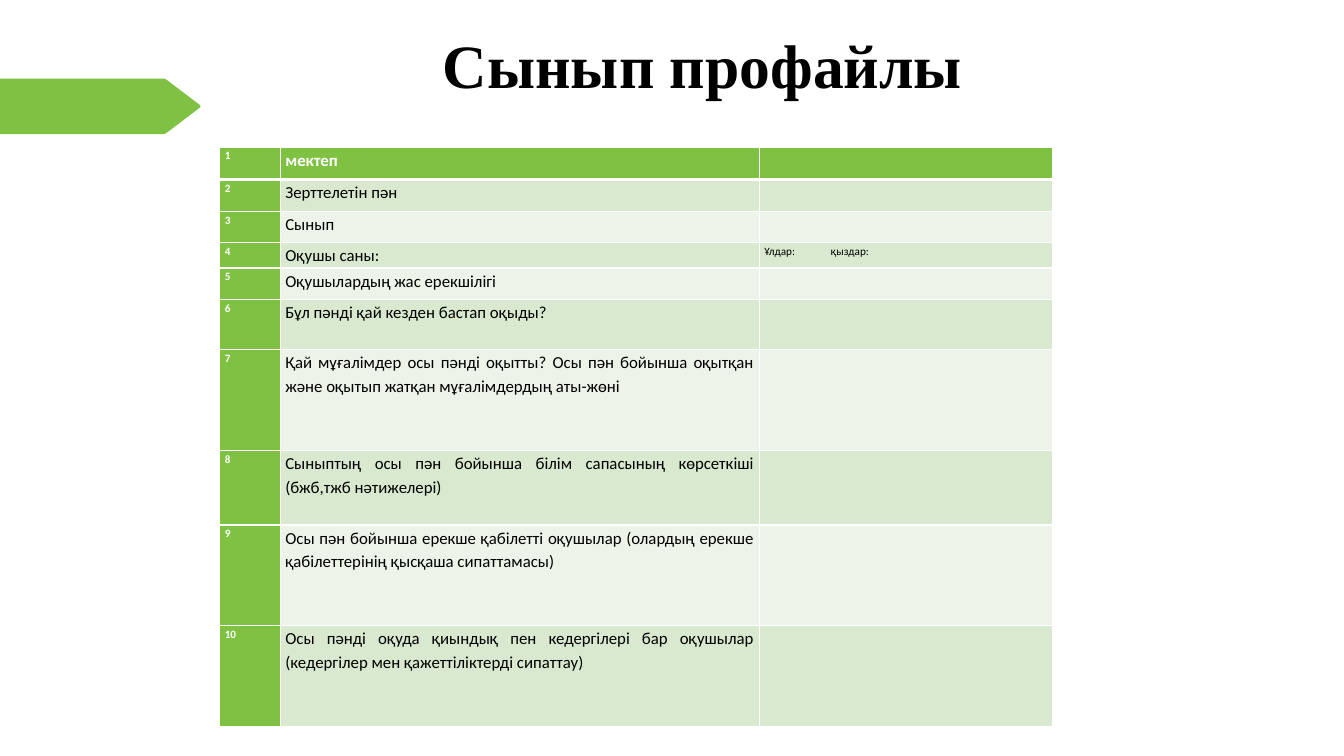
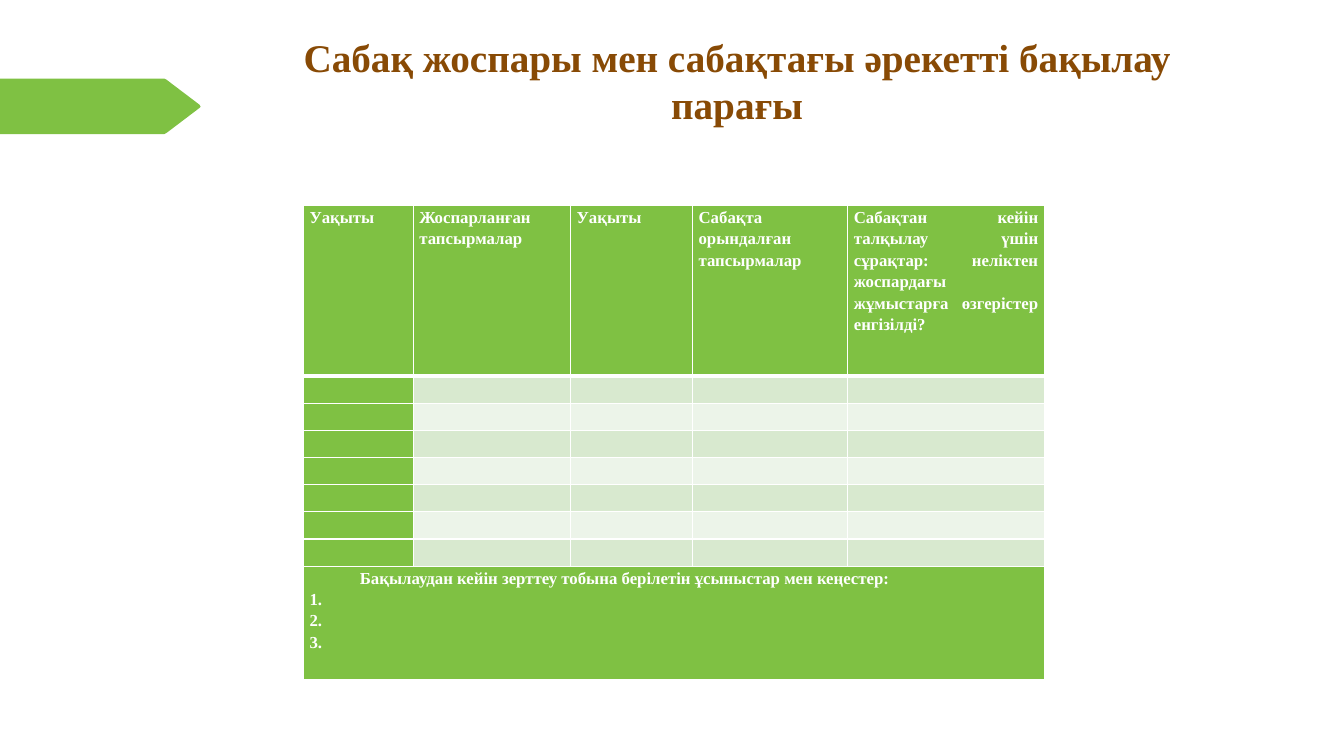
from lxml import etree
from pptx import Presentation
from pptx.dml.color import RGBColor
from pptx.enum.text import MSO_ANCHOR as ANCHOR, MSO_AUTO_SIZE as AUTO, PP_ALIGN as ALIGN
from pptx.oxml.ns import qn
from pptx.util import Pt

PX = 9144
GREEN, WHITE, BLACK, BROWN = "7FC143", "FFFFFF", "000000", "884A05"
BANDS = ("ECF4E9", "D8E9CF")
SERIF, SANS = "Times New Roman", "Calibri"
ARROW = [(163, 78), (165, 79), (198, 104), (199, 106), (198, 107),
         (165, 132), (163, 133), (0, 133)]
QUESTIONS = [
    "мектеп",
    "Зерттелетін пән",
    "Сынып",
    "Оқушы саны:",
    "Оқушылардың жас ерекшілігі",
    "Бұл пәнді қай кезден бастап оқыды?",
    "Қай мұғалімдер осы пәнді оқытты? Осы пән бойынша оқытқан және оқытып "
    "жатқан мұғалімдердың аты-жөні",
    "Сыныптың осы пән бойынша білім сапасының көрсеткіші (бжб,тжб нәтижелері)",
    "Осы пән бойынша ерекше қабілетті оқушылар (олардың ерекше қабілеттерінің "
    "қысқаша сипаттамасы)",
    "Осы пәнді оқуда қиындық пен кедергілері бар оқушылар (кедергілер мен "
    "қажеттіліктерді сипаттау)",
]
HEADERS = [
    "Уақыты",
    "Жоспарланған тапсырмалар",
    "Уақыты",
    "Сабақта орындалған тапсырмалар",
    "Сабақтан кейін талқылау үшін сұрақтар: неліктен жоспардағы жұмыстарға "
    "өзгерістер енгізілді?",
]
ADVICE = "Бақылаудан кейін зерттеу тобына берілетін ұсыныстар мен кеңестер:\n1.\n2.\n3."


def px(n):
    """Turn px into EMU."""
    return int(n * PX)


def rgb(color):
    """Turn a hex string into a colour."""
    return RGBColor.from_string(color)


def set_font(font, color, **fmt):
    """Apply a colour and a dict of font values."""
    font.color.rgb = rgb(color)
    for key, value in fmt.items():
        setattr(font, key, value)


def add_arrow(slide):
    """Draw the green arrow at the left edge."""
    builder = slide.shapes.build_freeform(0, 78, scale=PX)
    builder.add_line_segments(ARROW)
    sp = builder.convert_to_shape()
    sp.shadow.inherit = False
    sp.fill.solid()
    sp.fill.fore_color.rgb = rgb(GREEN)
    sp.line.fill.background()


def set_title(slide, text, box, size, color, spacing):
    """Move and format the title placeholder."""
    sp = slide.shapes.title
    sp.left, sp.top, sp.width, sp.height = map(px, box)
    tf = sp.text_frame
    tf.text = text
    tf.word_wrap, tf.auto_size, tf.vertical_anchor = True, AUTO.NONE, ANCHOR.MIDDLE
    p = tf.paragraphs[0]
    p.alignment, p.line_spacing = ALIGN.CENTER, spacing
    set_font(p.runs[0].font, color, name=SERIF, size=Pt(size), bold=True)


def set_borders(cell, top, bottom):
    """Give a cell white borders with widths in points."""
    tc_pr = cell._tc.get_or_add_tcPr()
    for side, width in zip("LRTB", (1, 1, top, bottom)):
        ln = etree.SubElement(tc_pr, qn(f"a:ln{side}"), w=str(Pt(width)))
        fill = etree.SubElement(ln, qn("a:solidFill"))
        etree.SubElement(fill, qn("a:srgbClr"), val=WHITE)


def set_cell(cell, text, fill, margin, fmt):
    """Fill a cell and write its justified paragraphs."""
    cell.margin_left = cell.margin_right = px(margin)
    cell.margin_top = cell.margin_bottom = 0
    cell.fill.solid()
    cell.fill.fore_color.rgb = rgb(fill)
    tf = cell.text_frame
    for i, line in enumerate(text.split("\n")):
        p = tf.add_paragraph() if i else tf.paragraphs[0]
        p.alignment, p.line_spacing = ALIGN.JUSTIFY, 1.15
        if line:
            r = p.add_run()
            r.text = line
            set_font(r.font, **fmt)
        else:
            p._p.get_or_add_endParaRPr().set("sz", "800")


def add_grid(slide, origin, widths, heights, texts, margin, style):
    """Add a banded table with a green header row and first column."""
    size = sum(widths), sum(heights)
    frame = slide.shapes.add_table(len(heights), len(widths), *map(px, origin + size))
    table = frame.table
    for col, width in zip(table.columns, widths):
        col.width = px(width)
    for i, (row, height) in enumerate(zip(table.rows, heights)):
        row.height = px(height)
        for j, cell in enumerate(row.cells):
            set_borders(cell, 3 if i == 1 else 1, 3 if i == 0 else 1)
            fill = GREEN if i == 0 or j == 0 else BANDS[i % 2]
            set_cell(cell, texts[i][j], fill, margin, style(i, j))
    return table


def profile_style(i, j):
    """Return the font of a class profile cell."""
    strong = i == 0 or j == 0
    return dict(color=WHITE if strong else BLACK, name=SANS,
                size=Pt(12 if j == 1 else 8), bold=strong)


def plan_style(i, j):
    """Return the font of a lesson plan cell."""
    return dict(color=WHITE, name=SERIF, size=Pt(12), bold=True)


def build_profile(slide):
    """Build the class profile slide."""
    set_title(slide, "Сынып профайлы", (297, 29, 800, 78), 44, BLACK, 0.9)
    texts = [[str(n), q, ""] for n, q in enumerate(QUESTIONS, 1)]
    texts[3][2] = "Ұлдар:\tқыздар:"
    heights = [32, 32, 31, 25, 31, 50, 100, 74, 100, 100]
    table = add_grid(slide, (218, 146), [60, 475, 291], heights, texts, 5, profile_style)
    p = table.cell(3, 2).text_frame.paragraphs[0]
    p.alignment = ALIGN.LEFT
    tabs = etree.SubElement(p._p.get_or_add_pPr(), qn("a:tabLst"))
    etree.SubElement(tabs, qn("a:tab"), pos=str(px(66)), algn="l")


def build_plan(slide):
    """Build the lesson observation slide."""
    set_title(slide, "Сабақ жоспары мен сабақтағы әрекетті бақылау парағы",
              (250, 29, 962, 102), 28, BROWN, 1.0)
    blank = [""] * len(HEADERS)
    texts = [HEADERS] + [blank] * 7 + [[ADVICE] + blank[1:]]
    heights = [169] + [27] * 7 + [112]
    table = add_grid(slide, (301, 204), [109, 156, 121, 154, 195], heights, texts, 6,
                     plan_style)
    advice = table.cell(8, 0)
    advice.merge(table.cell(8, 4))
    p_pr = advice.text_frame.paragraphs[0]._p.get_or_add_pPr()
    p_pr.set("marL", str(px(50)))
    p_pr.set("indent", "0")


def main():
    """Build and save the presentation."""
    prs = Presentation()
    prs.slide_width, prs.slide_height = px(1333), px(750)
    for build in (build_profile, build_plan):
        slide = prs.slides.add_slide(prs.slide_layouts[5])
        add_arrow(slide)
        build(slide)
    prs.save("out.pptx")


if __name__ == "__main__":
    main()
